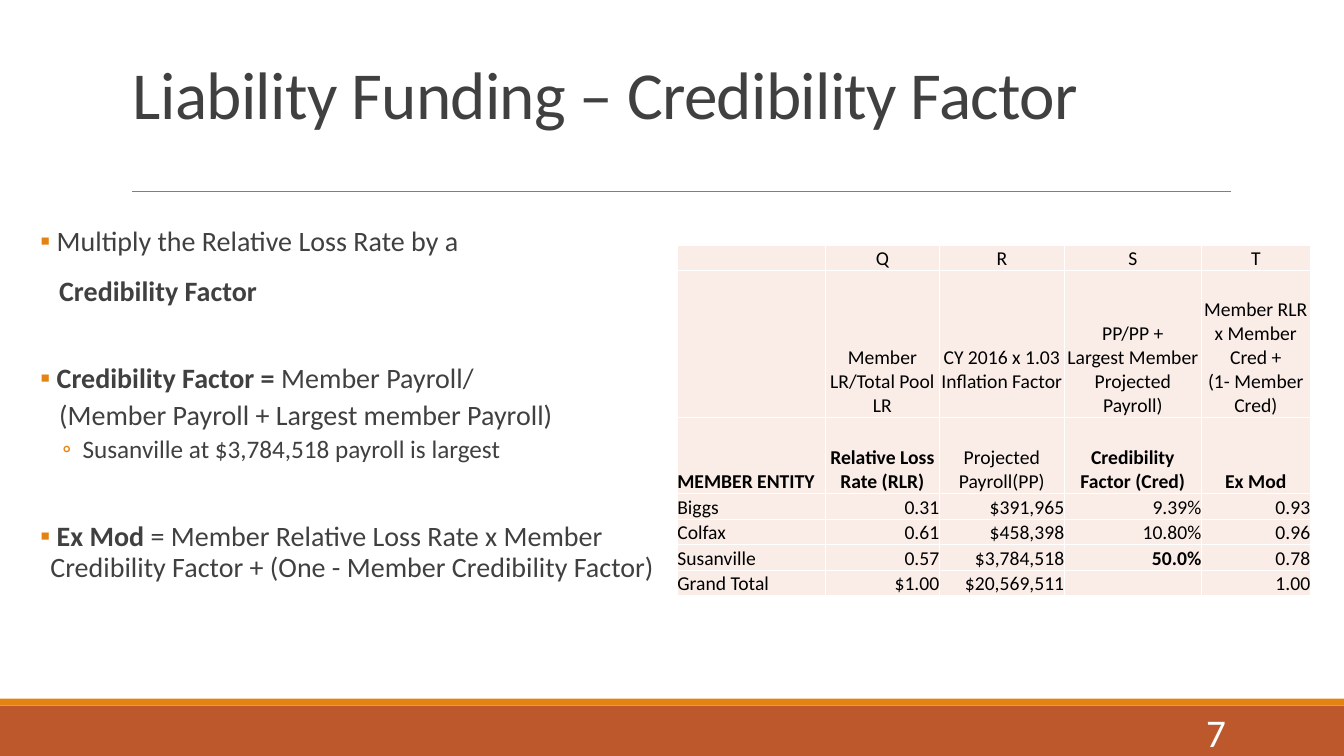
from lxml import etree
from pptx import Presentation
from pptx.dml.color import RGBColor
from pptx.enum.shapes import MSO_CONNECTOR, MSO_SHAPE
from pptx.enum.text import MSO_ANCHOR, MSO_AUTO_SIZE, PP_ALIGN
from pptx.oxml.ns import qn
from pptx.util import Pt

LEFT, CENTER, RIGHT = PP_ALIGN.LEFT, PP_ALIGN.CENTER, PP_ALIGN.RIGHT
TOP, MIDDLE, BOTTOM = MSO_ANCHOR.TOP, MSO_ANCHOR.MIDDLE, MSO_ANCHOR.BOTTOM
FONT = "Calibri"
GRAY, ORANGE, RUST, PINK = "404040", "E48312", "BD582C", "FAEDE7"
WHITE, BLACK, RULE_GRAY = "FFFFFF", "000000", "808080"

TITLE = "Liability Funding – Credibility Factor"
PAGE = "7"
# runs, size, margin, indent, bullet, line spacing, space before, space after
POINTS = [
    ([(" Multiply the Relative Loss Rate by a", False)], 20, 7.2, -7.2, "▪", 0.9, 12, 2),
    ([("Credibility Factor", True)], 20, 13.5, 0, None, 0.9, 12, 2),
    ([(" Credibility Factor = ", True), ("Member Payroll/", False)], 20, 7.2, -7.2, "▪", 1, 36, 2),
    ([("(Member Payroll + Largest member Payroll)", False)], 20, 13.5, 0, None, 1, 0, 2),
    ([("Susanville at $3,784,518 payroll is largest", False)], 18, 30.2, -14.4, "◦", 0.9, 2, 4),
    ([(" Ex Mod ", True),
      ("= Member Relative Loss Rate x Member Credibility Factor + (One - Member Credibility Factor)", False)],
     20, 7.2, -7.2, "▪", 0.9, 38, 2),
]
ROWS = [
    ["", "Q", "R", "S", "T"],
    ["", "Member LR/Total Pool LR", "CY 2016 x 1.03 Inflation Factor",
     "PP/PP +\nLargest Member Projected Payroll)", "Member RLR x Member Cred +\n(1- Member Cred)"],
    ["MEMBER ENTITY", "Relative Loss Rate (RLR)", "Projected Payroll(PP)",
     "Credibility Factor (Cred)", "Ex Mod"],
    ["Biggs", "0.31", "$391,965", "9.39%", "0.93"],
    ["Colfax", "0.61", "$458,398", "10.80%", "0.96"],
    ["Susanville", "0.57", "$3,784,518", "50.0%", "0.78"],
    ["Grand Total", "$1.00", "$20,569,511", "", "1.00"],
]
HEADING_ROWS = 3
BOLD_CELLS = {(2, 0), (2, 1), (2, 3), (2, 4), (5, 3)}
RAISED_CELL = (1, 2)
COLUMN_WIDTHS = [105.8, 81.4, 89.3, 97.9, 77.8]
ROW_HEIGHTS = [18, 105.1, 54.7] + [18.2] * 4


def color(value):
    return RGBColor.from_string(value)


def style(run, size, tint, bold=False):
    run.font.name = FONT
    run.font.size = Pt(size)
    run.font.bold = bold
    run.font.color.rgb = color(tint)


def set_frame(frame, anchor, margins):
    frame.word_wrap = True
    frame.auto_size = MSO_AUTO_SIZE.NONE
    frame.vertical_anchor = anchor
    frame.margin_left, frame.margin_top, frame.margin_right, frame.margin_bottom = map(Pt, margins)


def add_band(top, height, tint):
    band = slide.shapes.add_shape(MSO_SHAPE.RECTANGLE, 0, Pt(top), prs.slide_width, Pt(height))
    band.shadow.inherit = False
    band.fill.solid()
    band.fill.fore_color.rgb = color(tint)
    band.line.fill.background()


def set_bullet(paragraph, margin, indent, bullet):
    props = paragraph._p.get_or_add_pPr()
    props.set("marL", str(Pt(margin)))
    props.set("indent", str(Pt(indent)))
    if bullet:
        tint = etree.SubElement(props, qn("a:buClr"))
        etree.SubElement(tint, qn("a:srgbClr"), val=ORANGE)
        etree.SubElement(props, qn("a:buFont"), typeface=FONT)
        etree.SubElement(props, qn("a:buChar"), char=bullet)
    else:
        etree.SubElement(props, qn("a:buNone"))


def set_borders(cell):
    props = cell._tc.get_or_add_tcPr()
    for position, side in enumerate(("a:lnL", "a:lnR", "a:lnT", "a:lnB")):
        border = etree.Element(qn(side), w=str(Pt(1)))
        fill = etree.SubElement(border, qn("a:solidFill"))
        etree.SubElement(fill, qn("a:srgbClr"), val=WHITE)
        props.insert(position, border)


def fill_cell(cell, row, column, text):
    cell.fill.solid()
    cell.fill.fore_color.rgb = color(PINK)
    set_borders(cell)
    cell.margin_left = cell.margin_right = cell.margin_top = 0
    cell.margin_bottom = Pt(17 if (row, column) == RAISED_CELL else 0)
    cell.vertical_anchor = BOTTOM
    cell.text_frame.text = text
    for paragraph in cell.text_frame.paragraphs:
        paragraph.alignment = LEFT if column == 0 else CENTER if row < HEADING_ROWS else RIGHT
        for run in paragraph.runs:
            style(run, 14, BLACK, (row, column) in BOLD_CELLS)
        if not text:
            etree.SubElement(paragraph._p, qn("a:endParaRPr"), sz="1400")


prs = Presentation()
prs.slide_width, prs.slide_height = Pt(960), Pt(540)
slide = prs.slides.add_slide(prs.slide_layouts[5])

add_band(504, 36, RUST)
add_band(499, 5, ORANGE)

rule = slide.shapes.add_connector(MSO_CONNECTOR.STRAIGHT, Pt(94.3), Pt(136.8), Pt(879), Pt(136.8))
rule.line.color.rgb = color(RULE_GRAY)
rule.line.width = Pt(0.5)
etree.SubElement(rule._element.spPr, qn("a:effectLst"))

title = slide.shapes.title
title.left, title.top, title.width, title.height = Pt(87.8), Pt(10.8), Pt(792), Pt(114.5)
set_frame(title.text_frame, BOTTOM, (7.2, 3.6, 7.2, 30))
title.text_frame.text = TITLE
heading = title.text_frame.paragraphs[0]
heading.alignment = LEFT
heading.line_spacing = 0.85
style(heading.runs[0], 48, GRAY)
heading.runs[0].font._element.set("spc", "-50")

table = slide.shapes.add_table(len(ROWS), len(COLUMN_WIDTHS), Pt(483.8), Pt(175),
                               Pt(sum(COLUMN_WIDTHS)), Pt(sum(ROW_HEIGHTS))).table
table.first_row = table.horz_banding = False
for column, width in zip(table.columns, COLUMN_WIDTHS):
    column.width = Pt(width)
for row, height in zip(table.rows, ROW_HEIGHTS):
    row.height = Pt(height)
for row, texts in enumerate(ROWS):
    for column, text in enumerate(texts):
        fill_cell(table.cell(row, column), row, column, text)

points = slide.shapes.add_textbox(Pt(28.8), Pt(159.1), Pt(470.2), Pt(316.8)).text_frame
set_frame(points, TOP, (0, 3.6, 0, 3.6))
points.text = "\n".join("".join(text for text, _ in point[0]) for point in POINTS)
for paragraph, point in zip(points.paragraphs, POINTS):
    runs, size, margin, indent, bullet, spacing, before, after = point
    paragraph.line_spacing = spacing
    paragraph.space_before, paragraph.space_after = Pt(before), Pt(after)
    set_bullet(paragraph, margin, indent, bullet)
    while len(paragraph.runs) < len(runs):
        paragraph.add_run()
    for run, (text, bold) in zip(paragraph.runs, runs):
        run.text = text
        style(run, size, GRAY, bold)

page = slide.shapes.add_textbox(Pt(779.8), Pt(508.3), Pt(103), Pt(28.8)).text_frame
set_frame(page, MIDDLE, (7.2, 3.6, 7.2, 3.6))
page.text = PAGE
page.paragraphs[0].alignment = RIGHT
style(page.paragraphs[0].runs[0], 28, WHITE)

prs.save("out.pptx")
